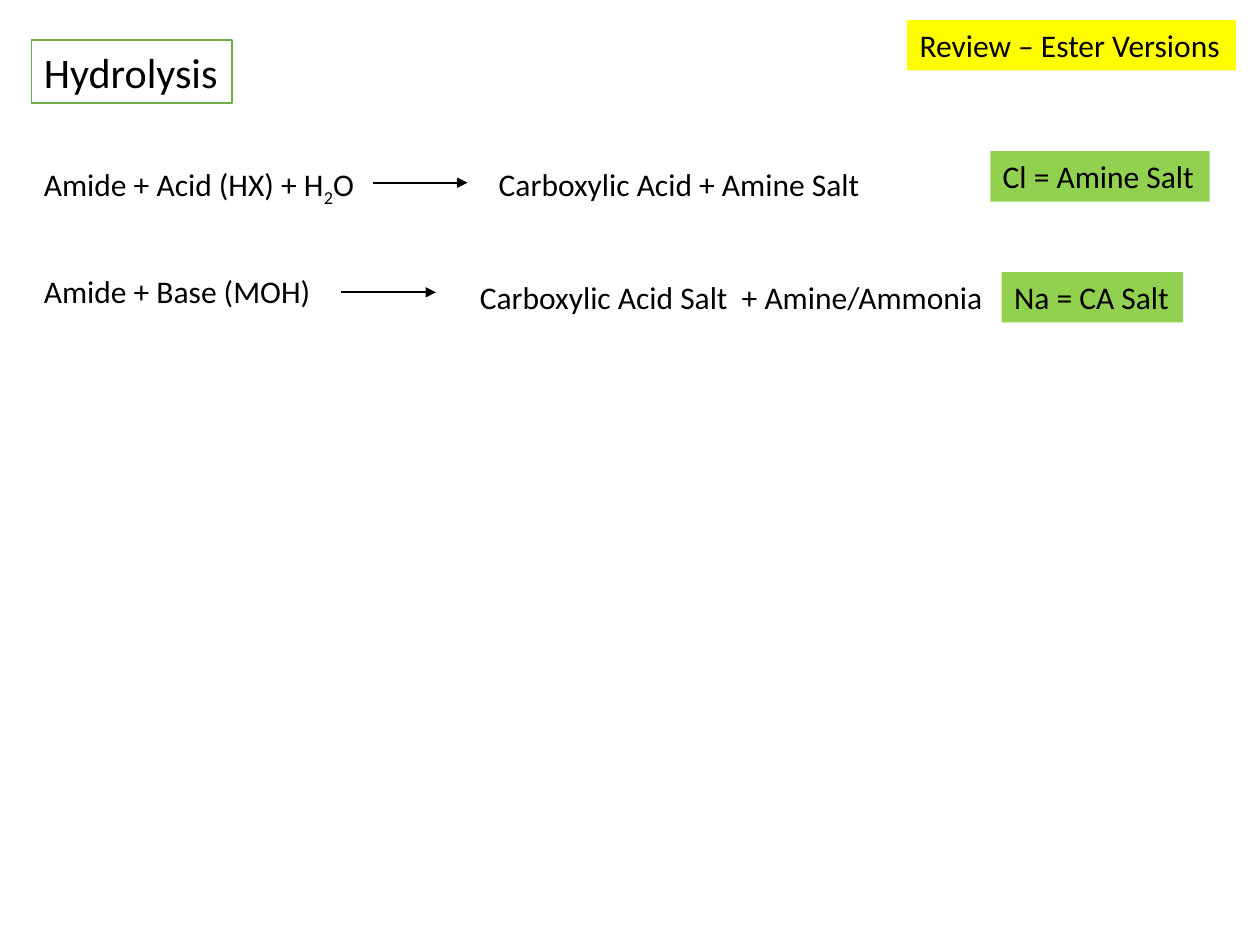
from dataclasses import dataclass

from lxml import etree
from pptx import Presentation
from pptx.dml.color import RGBColor
from pptx.enum.shapes import MSO_CONNECTOR, MSO_SHAPE
from pptx.enum.text import MSO_ANCHOR, MSO_AUTO_SIZE, PP_ALIGN
from pptx.oxml.ns import qn
from pptx.util import Inches, Pt

RECT = MSO_SHAPE.RECTANGLE
STRAIGHT = MSO_CONNECTOR.STRAIGHT
TOP = MSO_ANCHOR.TOP
LEFT = PP_ALIGN.LEFT
GROW = MSO_AUTO_SIZE.SHAPE_TO_FIT_TEXT


@dataclass(frozen=True)
class Theme:
    font: str = "Calibri"
    ink: RGBColor = RGBColor(0, 0, 0)
    paper: RGBColor = RGBColor(255, 255, 255)
    frame: RGBColor = RGBColor(0x70, 0xAD, 0x47)
    review: RGBColor = RGBColor(255, 255, 0)
    salt: RGBColor = RGBColor(0x92, 0xD0, 0x50)
    title: Pt = Pt(24)
    body: Pt = Pt(18)
    stroke: Pt = Pt(1)


THEME = Theme()
ROW = 0.4
ARROW = 0.75


def write(shape, text, size):
    """Fill the shape with text; parts between underscores are subscripts."""
    frame = shape.text_frame
    format = {"word_wrap": False, "auto_size": GROW, "vertical_anchor": TOP}
    for name, value in format.items():
        setattr(frame, name, value)
    line = frame.paragraphs[0]
    line.alignment = LEFT
    for i, part in enumerate(text.split("_")):
        run = line.add_run()
        run.text = part
        for name, value in {"name": THEME.font, "size": size}.items():
            setattr(run.font, name, value)
        run.font.color.rgb = THEME.ink
        if i % 2:
            run.font._element.set("baseline", "-25000")


def label(slide, box, text):
    shape = slide.shapes.add_textbox(*map(Inches, box))
    write(shape, text, THEME.body)


def panel(slide, box, text, fill, size=THEME.body, edge=None):
    shape = slide.shapes.add_shape(RECT, *map(Inches, box))
    shape.shadow.inherit = False
    shape.fill.solid()
    shape.fill.fore_color.rgb = fill
    if edge is None:
        shape.line.fill.background()
    else:
        shape.line.color.rgb = edge
        shape.line.width = THEME.stroke
    write(shape, text, size)


def arrow(slide, x, y):
    ends = map(Inches, (x, y, x + ARROW, y))
    link = slide.shapes.add_connector(STRAIGHT, *ends)
    link.line.color.rgb = THEME.ink
    link.line.width = THEME.stroke
    tip = etree.SubElement(link.line._get_or_add_ln(), qn("a:tailEnd"))
    tip.set("type", "triangle")
    etree.SubElement(link._element.spPr, qn("a:effectLst"))


def header(slide, left, top, width):
    """Place the framed title at the left and the review tag at the right."""
    panel(slide, (left, top + 0.16, 1.59, 0.5), "Hydrolysis",
          THEME.paper, THEME.title, THEME.frame)
    tag = 2.61
    panel(slide, (left + width - tag, top, tag, ROW),
          "Review – Ester Versions", THEME.review)


def reaction(slide, left, top, start, yields, note):
    """Place reactants, arrow, products and salt tag along one row."""
    text, width = start
    label(slide, (left, top, width, ROW), text)
    tip, drop = yields["arrow"]
    arrow(slide, left + tip, top + drop)
    x, dy, width, text = yields["label"]
    label(slide, (left + x, top + dy, width, ROW), text)
    x, dy, width, text = note
    panel(slide, (left + x, top + dy, width, ROW), text, THEME.salt)


def main():
    deck = Presentation()
    deck.slide_width, deck.slide_height = Inches(10), Inches(7.5)
    slide = deck.slides.add_slide(deck.slide_layouts[6])
    left = 0.25
    header(slide, left, 0.16, 9.56)
    reaction(slide, left, 1.26, ("Amide + Acid (HX) + H_2_O", 2.71),
             {"arrow": (2.71, 0.19),
              "label": (3.61, 0, 3.1, "Carboxylic Acid + Amine Salt")},
             (7.61, -0.06, 1.74, "Cl = Amine Salt"))
    reaction(slide, left, 2.11, ("Amide + Base (MOH)", 2.34),
             {"arrow": (2.46, 0.21),
              "label": (3.46, 0.05, 4.24,
                        "Carboxylic Acid Salt  + Amine/Ammonia")},
             (7.7, 0.05, 1.44, "Na = CA Salt"))
    deck.save("out.pptx")


if __name__ == "__main__":
    main()
